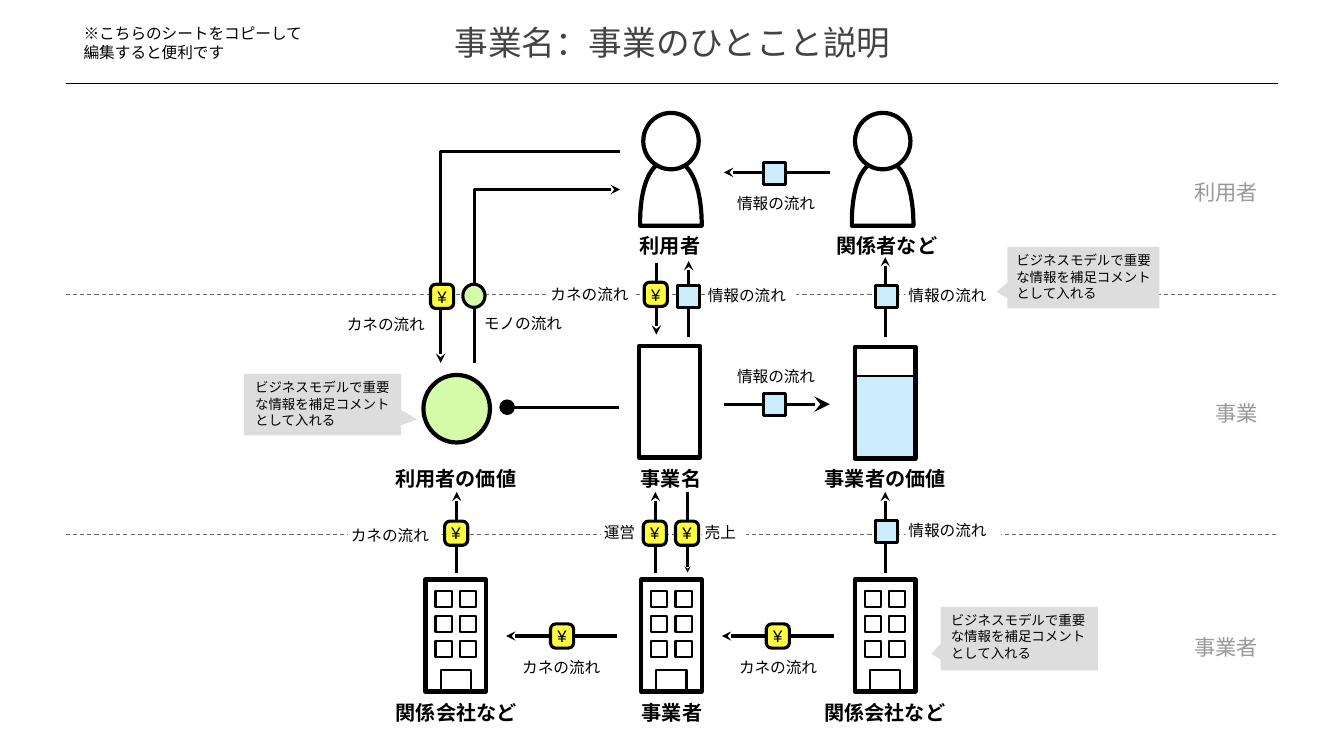
import pptx
import pptx.util
import pptx.dml.color
import pptx.enum.shapes
import pptx.enum.text
import pptx.oxml
import pptx.oxml.ns

Inches = pptx.util.Inches
Pt = pptx.util.Pt
RGB = pptx.dml.color.RGBColor.from_string
KIND = pptx.enum.shapes.MSO_SHAPE
ALIGN = pptx.enum.text.PP_ALIGN
MIDDLE = pptx.enum.text.MSO_ANCHOR.MIDDLE
TOP = pptx.enum.text.MSO_ANCHOR.TOP
RECT, OVAL, ROUND = KIND.RECTANGLE, KIND.OVAL, KIND.ROUNDED_RECTANGLE
LEFT, MID, RIGHT = ALIGN.LEFT, ALIGN.CENTER, ALIGN.RIGHT
COLOR = {"ink": "000000", "white": "FFFFFF", "title": "434343", "row": "999999",
         "dash": "666666", "note": "DDDDDD", "money": "FFFC41", "info": "CBECFA", "goods": "D4FCA9"}
NS = "http://schemas.openxmlformats.org/drawingml/2006/main"

deck = pptx.Presentation()
deck.slide_width, deck.slide_height = Inches(13.33), Inches(7.5)
slide = deck.slides.add_slide(deck.slide_layouts[6])
shapes = slide.shapes


def box(kind, x, y, w, h, fill=None, width=0, text="", size=12, color="ink",
        bold=False, align=MID, pad=(0.03, 0.03), anchor=MIDDLE):
    area = tuple(Inches(v) for v in (x, y, w, h))
    if kind is None:
        item = shapes.add_textbox(*area)
    else:
        item = shapes.add_shape(kind, *area)
        item.shadow.inherit = False
    if fill:
        item.fill.solid()
        item.fill.fore_color.rgb = RGB(COLOR[fill])
    else:
        item.fill.background()
    if width:
        item.line.color.rgb = RGB(COLOR["ink"])
        item.line.width = Pt(width)
    else:
        item.line.fill.background()
    if text:
        frame = item.text_frame
        frame.text = text
        frame.word_wrap = True
        frame.vertical_anchor = anchor
        frame.margin_left = frame.margin_right = Inches(pad[0])
        frame.margin_top = frame.margin_bottom = Inches(pad[1])
        for para in frame.paragraphs:
            para.alignment = align
            for run in para.runs:
                font = run.font
                font.name, font.size, font.bold = "Arial", Pt(size), bold
                font.color.rgb = RGB(COLOR[color])
                east = pptx.oxml.parse_xml(f'<a:ea xmlns:a="{NS}" typeface="Arial"/>')
                font._element.find(pptx.oxml.ns.qn("a:latin")).addnext(east)
    return item


def link(points, width=2.25, color="ink", tip=None, span="med", dash=False):
    spots = [(Inches(x), Inches(y)) for x, y in points]
    if len(spots) == 2:
        line = shapes.add_connector(pptx.enum.shapes.MSO_CONNECTOR.STRAIGHT, *spots[0], *spots[1])
    else:
        path = shapes.build_freeform(*spots[0])
        path.add_line_segments(spots[1:], close=False)
        line = path.convert_to_shape()
        line.fill.background()
    line.line.color.rgb = RGB(COLOR[color])
    line.line.width = Pt(width)
    if dash:
        line.line.dash_style = pptx.enum.dml.MSO_LINE.DASH
    if tip:
        line.line._get_or_add_ln().append(pptx.oxml.parse_xml(
            f'<a:tailEnd xmlns:a="{NS}" type="{tip}" w="{span}" len="{span}"/>'))
    line._element.spPr.append(pptx.oxml.parse_xml(f'<a:effectLst xmlns:a="{NS}"/>'))


for y in (2.92, 5.3):
    link([(0.65, y), (12.68, y)], 0.75, "dash", dash=True)
link([(0.65, 0.83), (12.68, 0.83)], 0.75)

box(None, 0.67, 0, 12, 0.84, text="事業名：事業のひとこと説明", size=24, color="title", pad=(0.08, 0.08))
box(None, 0.75, 0.2, 2.36, 0.46, text="※こちらのシートをコピーして\n編集すると便利です",
    size=11.2, align=LEFT, pad=(0.08, 0.04), anchor=TOP)
for y, text in ((1.78, "利用者"), (3.98, "事業"), (6.3, "事業者")):
    box(None, 11.5, y, 1.01, 0.24, text=text, size=15.2, color="row", align=RIGHT)

for x, y, w, h, text in (
        (5.96, 5.19, 0.44, 0.18, "運営"), (6.96, 5.19, 0.44, 0.18, "売上"),
        (8.98, 2.75, 0.95, 0.36, "情報の流れ"), (8.98, 5.08, 0.95, 0.36, "情報の流れ"),
        (6.99, 2.79, 0.91, 0.27, "情報の流れ"), (7.28, 1.88, 0.91, 0.27, "情報の流れ"),
        (7.28, 3.6, 0.91, 0.27, "情報の流れ"), (3.45, 5.15, 0.93, 0.32, "カネの流れ"),
        (5.15, 6.46, 0.93, 0.32, "カネの流れ"), (7.3, 6.46, 0.93, 0.32, "カネの流れ"),
        (5.43, 2.76, 0.86, 0.32, "カネの流れ"), (3.41, 3.06, 0.93, 0.32, "カネの流れ"),
        (4.77, 3.05, 0.93, 0.32, "モノの流れ")):
    box(RECT, x, y, w, h, "white", text=text, size=11.2, align=LEFT)

for x, y, w, text in (
        (5.75, 2.3, 1.79, "利用者"), (7.9, 2.3, 1.79, "関係者など"),
        (3.74, 4.61, 1.56, "利用者の価値"), (6.08, 4.61, 1.15, "事業名"), (8.05, 4.61, 1.46, "事業者の価値"),
        (3.51, 6.93, 2.03, "関係会社など"), (5.65, 6.93, 2.03, "事業者"), (7.76, 6.93, 2.03, "関係会社など")):
    box(None, x, y, w, 0.27, text=text, size=14.4, bold=True)

curves = (((0.61, 0.65), (0.61, 0.65), (0.63, 0), (0.3, 0)),
          ((0.3, 0), (-0.03, 0), (0, 0.65), (0, 0.65)))
body = [(0, 0.65)]
for a, b, c, d in curves:
    for step in range(21):
        t = step / 20
        u = 1 - t
        body.append(tuple(u**3 * a[i] + 3 * u * u * t * b[i] + 3 * u * t * t * c[i] + t**3 * d[i]
                          for i in (0, 1)))
for x in (6.35, 8.45):
    spots = [(Inches(x + dx), Inches(1.59 + dy)) for dx, dy in body]
    path = shapes.build_freeform(*spots[0])
    path.add_line_segments(spots[1:], close=True)
    torso = path.convert_to_shape()
    torso.shadow.inherit = False
    torso.fill.solid()
    torso.fill.fore_color.rgb = RGB(COLOR["white"])
    torso.line.color.rgb = RGB(COLOR["ink"])
    torso.line.width = Pt(3)
    box(OVAL, x + 0.03, 1.12, 0.55, 0.56, "white", 3)

for x in (4.22, 6.36, 8.48):
    box(RECT, x, 5.75, 0.6, 1.11, "white", 3)
    for row in range(3):
        for col in range(2):
            box(RECT, x + 0.1 + 0.24 * col, 5.86 + 0.25 * row, 0.16, 0.16, "white", 1.5)
    box(RECT, x + 0.15, 6.65, 0.3, 0.21, width=1.5)

box(OVAL, 4.2, 3.72, 0.66, 0.67, "goods", 3)
box(RECT, 6.34, 3.43, 0.6, 1.11, width=3)
box(RECT, 8.48, 3.73, 0.6, 0.8, "info")
box(RECT, 8.48, 3.44, 0.6, 1.11, width=3)
link([(8.47, 3.73), (9.1, 3.73)], 1.5)

for points in (
        [(6.15, 1.5), (4.37, 1.5), (4.37, 3.6)], [(4.71, 3.6), (4.71, 1.88), (6.15, 1.88)],
        [(8.23, 1.71), (7.18, 1.71)], [(6.51, 2.61), (6.51, 3.32)],
        [(6.83, 3.34), (6.83, 2.59)], [(8.78, 3.34), (8.78, 2.55)],
        [(4.53, 5.68), (4.53, 4.88)], [(6.5, 5.68), (6.5, 4.88)],
        [(8.78, 5.68), (8.78, 4.88)],
        [(6.12, 6.31), (5.02, 6.31)], [(8.27, 6.31), (7.16, 6.31)]):
    link(points, tip="stealth")
link([(6.82, 4.88), (6.82, 5.68)], tip="stealth", span="sm")
link([(7.18, 4.01), (8.23, 4.01)], tip="stealth", span="lg")
link([(6.14, 4.04), (5.03, 4.04)], tip="oval", span="lg")

for x, y in ((4.27, 2.82), (6.39, 2.8), (4.41, 5.17), (6.38, 5.17), (6.7, 5.17), (5.46, 6.19), (7.6, 6.19)):
    coin = box(ROUND, x, y, 0.23, 0.24, "money", 2.25, "¥")
    coin.adjustments[0] = 0.23
for x, y in ((7.57, 1.61), (6.72, 2.83), (8.68, 2.83), (7.57, 3.9), (8.68, 5.16)):
    box(RECT, x, y, 0.22, 0.22, "info", 2.25)
box(OVAL, 4.59, 2.82, 0.22, 0.23, "goods", 2.25)

for x, y, w, h, tail, inset in ((9.99, 2.45, 1.51, 0.61, (-0.57, 0.23), 0.06),
                                (2.42, 3.71, 1.56, 0.61, (0.6, 0.24), 0.08),
                                (9.33, 6.02, 1.56, 0.63, (-0.56, 0.24), 0.07)):
    note = box(KIND.ROUNDED_RECTANGULAR_CALLOUT, x, y, w, h, "note")
    for i, value in enumerate((*tail, 0)):
        note.adjustments[i] = value
    box(None, x + inset, y + 0.03, 1.45, 0.53, size=9.6, align=LEFT,
        text="ビジネスモデルで重要な情報を補足コメントとして入れる")

deck.save("out.pptx")
